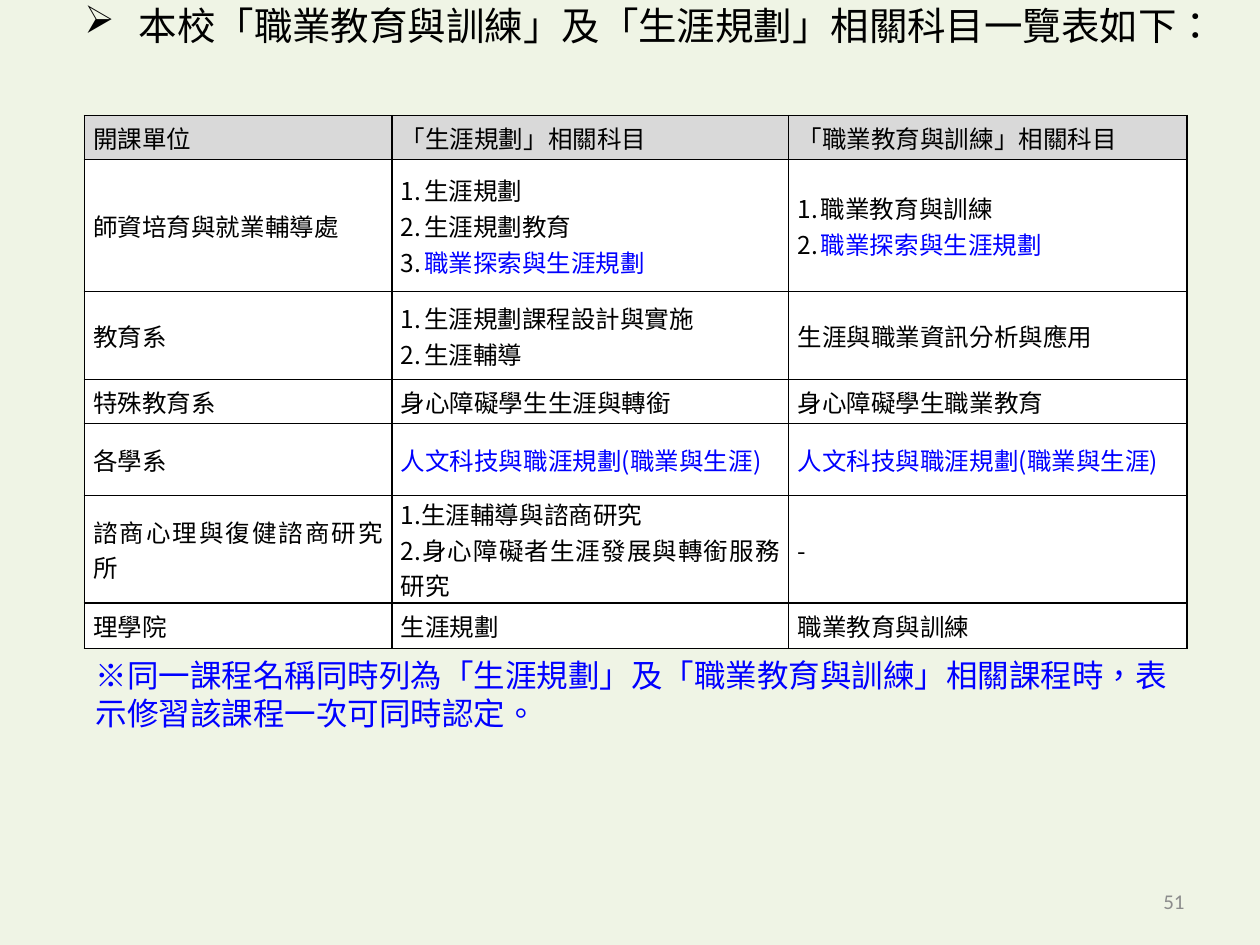
"""Build the slide listing career planning and vocational education courses."""
from lxml.etree import SubElement
from pptx import Presentation
from pptx.dml.color import RGBColor
from pptx.enum.text import MSO_ANCHOR as Anchor, PP_ALIGN as Align
from pptx.oxml import parse_xml
from pptx.oxml.ns import nsdecls, qn
from pptx.util import Cm, Pt

CJK = "Noto Sans CJK SC"
BLUE = "0000FF"
SHARED_COURSES = {"職業探索與生涯規劃", "人文科技與職涯規劃(職業與生涯)"}
ROWS = [
    ("開課單位", "「生涯規劃」相關科目", "「職業教育與訓練」相關科目"),
    ("師資培育與就業輔導處", "1. 生涯規劃\n2. 生涯規劃教育\n3. 職業探索與生涯規劃",
     "1. 職業教育與訓練\n2. 職業探索與生涯規劃"),
    ("教育系", "1. 生涯規劃課程設計與實施\n2. 生涯輔導", "生涯與職業資訊分析與應用"),
    ("特殊教育系", "身心障礙學生生涯與轉銜", "身心障礙學生職業教育"),
    ("各學系", "人文科技與職涯規劃(職業與生涯)", "人文科技與職涯規劃(職業與生涯)"),
    ("諮商心理與復健諮商研究所", "1.生涯輔導與諮商研究\n2.身心障礙者生涯發展與轉銜服務研究", "-"),
    ("理學院", "生涯規劃", "職業教育與訓練"),
]
COLUMN_WIDTHS = [6.2, 8, 8.03]
ROW_HEIGHTS = [0.89, 2.66, 1.77, 0.89, 1.45, 2.17, 0.91]


def color(value):
    return RGBColor.from_string(value)


def add_text(paragraph, text, size=14, font=CJK, fill="000000", align=Align.LEFT):
    paragraph.alignment = align
    run = paragraph.add_run()
    run.text = text
    run.font.size = Pt(size)
    run.font.name = font
    run.font.color.rgb = color(fill)
    run.font._element.set("lang", "zh-TW")
    SubElement(run.font._element, qn("a:ea"), typeface=font)


presentation = Presentation()
presentation.slide_width, presentation.slide_height = Cm(25.4), Cm(19.05)
slide = presentation.slides.add_slide(presentation.slide_layouts[6])
slide.background.fill.solid()
slide.background.fill.fore_color.rgb = color("EFF4E5")

title = slide.shapes.add_textbox(Cm(1.7), Cm(0), Cm(23.2), Cm(1)).text_frame
title.word_wrap = True
title.vertical_anchor = Anchor.MIDDLE
title.margin_left = title.margin_right = title.margin_top = title.margin_bottom = 0
heading = title.paragraphs[0]
properties = heading._p.get_or_add_pPr()
properties.set("marL", str(Cm(1.1)))
properties.set("indent", str(-Cm(1.1)))
SubElement(properties, qn("a:buChar"), char="➢")
add_text(heading, "本校「職業教育與訓練」及「生涯規劃」相關科目一覽表如下：", size=22)

table = slide.shapes.add_table(len(ROWS), len(COLUMN_WIDTHS), Cm(1.7), Cm(2.33),
                               Cm(sum(COLUMN_WIDTHS)), Cm(sum(ROW_HEIGHTS))).table
for column, width in zip(table.columns, COLUMN_WIDTHS):
    column.width = Cm(width)
for row_index, (row, height) in enumerate(zip(table.rows, ROW_HEIGHTS)):
    row.height = Cm(height)
    for cell, text in zip(row.cells, ROWS[row_index]):
        cell.vertical_anchor = Anchor.MIDDLE
        cell.margin_left = cell.margin_right = Cm(0.18)
        cell.margin_top = cell.margin_bottom = 0
        for side in ("lnL", "lnR", "lnT", "lnB"):
            cell._tc.get_or_add_tcPr().append(parse_xml(
                f'<a:{side} {nsdecls("a")} w="12700"><a:solidFill>'
                f'<a:srgbClr val="000000"/></a:solidFill></a:{side}>'))
        cell.fill.solid()
        cell.fill.fore_color.rgb = color("FFFFFF" if row_index else "D9D9D9")
        for line_index, line in enumerate(text.split("\n")):
            frame = cell.text_frame
            paragraph = frame.add_paragraph() if line_index else frame.paragraphs[0]
            number, space, course = line.rpartition(" ")
            if space:
                add_text(paragraph, number, align=Align.JUSTIFY)
                add_text(paragraph, space, size=7, align=Align.JUSTIFY)
            add_text(paragraph, course, align=Align.JUSTIFY,
                     fill=BLUE if course in SHARED_COURSES else "000000")

note = slide.shapes.add_textbox(Cm(1.68), Cm(13.1), Cm(22.45), Cm(1.8)).text_frame
note.word_wrap = True
add_text(note.paragraphs[0], "※同一課程名稱同時列為「生涯規劃」及「職業教育與訓練」相關課程時，"
         "表示修習該課程一次可同時認定。", size=18, fill=BLUE)

page_number = slide.shapes.add_textbox(Cm(18.2), Cm(17.65), Cm(5.93), Cm(1.02)).text_frame
page_number.word_wrap = True
page_number.vertical_anchor = Anchor.MIDDLE
add_text(page_number.paragraphs[0], "51", size=12, font="Calibri", fill="8C8C8C",
         align=Align.RIGHT)

presentation.save("out.pptx")
